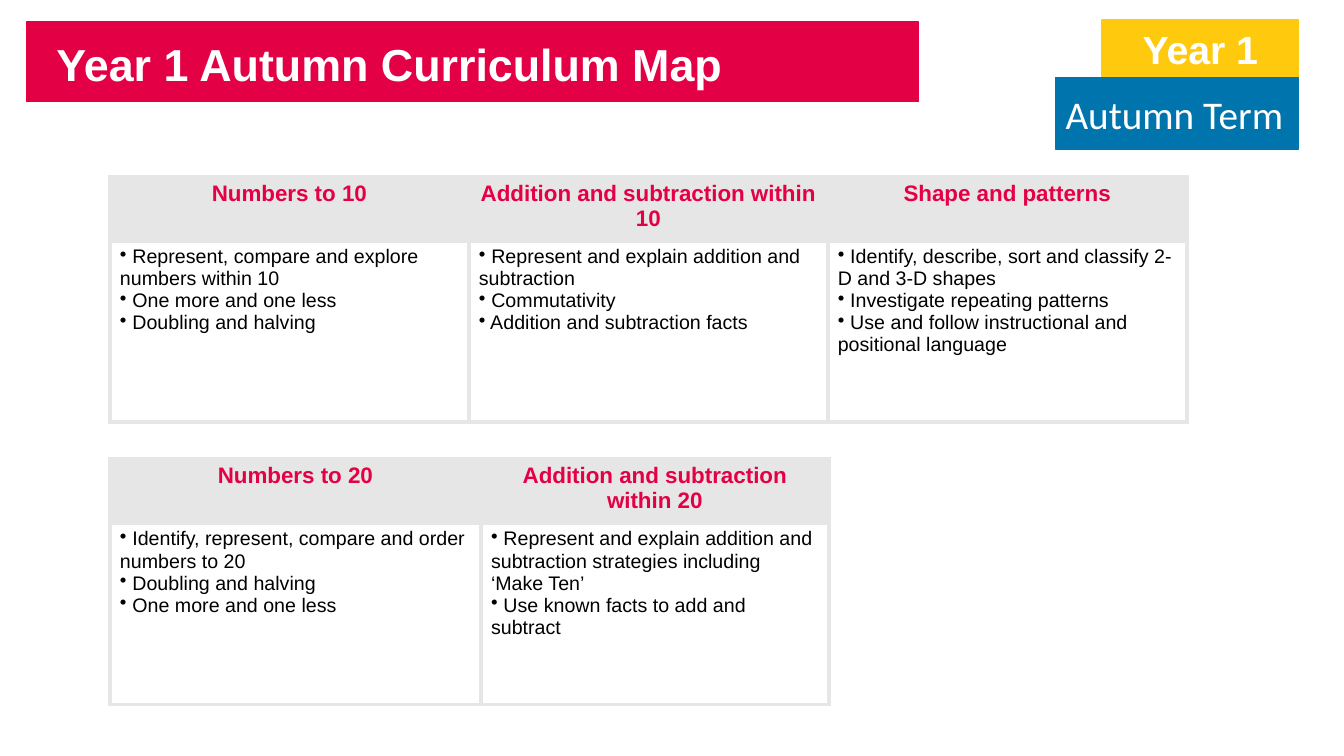
from lxml.etree import SubElement
from pptx import Presentation
from pptx.dml.color import RGBColor
from pptx.enum.shapes import MSO_SHAPE
from pptx.enum.text import MSO_ANCHOR, MSO_AUTO_SIZE, PP_ALIGN
from pptx.oxml.ns import qn
from pptx.util import Pt

PX = 9144
RED = RGBColor(0xE4, 0x00, 0x45)
GOLD = RGBColor(0xFF, 0xC9, 0x0D)
BLUE = RGBColor(0x00, 0x74, 0xAC)
GREY = RGBColor(0xE6, 0xE6, 0xE6)
WHITE = RGBColor(0xFF, 0xFF, 0xFF)
BLACK = RGBColor(0x00, 0x00, 0x00)

NUMBERS = [
    ("Numbers to 10", [
        "Represent, compare and explore numbers within 10",
        "One more and one less",
        "Doubling and halving"]),
    ("Addition and subtraction within 10", [
        "Represent and explain addition and subtraction",
        "Commutativity",
        "Addition and subtraction facts"]),
    ("Shape and patterns", [
        "Identify, describe, sort and classify 2-D and 3-D shapes",
        "Investigate repeating patterns",
        "Use and follow instructional and positional language"]),
]
TWENTY = [
    ("Numbers to 20", [
        "Identify, represent, compare and order numbers to 20",
        "Doubling and halving",
        "One more and one less"]),
    ("Addition and subtraction within 20", [
        "Represent and explain addition and subtraction strategies including ‘Make Ten’",
        "Use known facts to add and subtract"]),
]


def write(frame, *lines, size=14, color=BLACK, bold=False, font="Arial",
          align=PP_ALIGN.LEFT, bullet=None):
    for i, line in enumerate(lines):
        para = frame.add_paragraph() if i else frame.paragraphs[0]
        para.alignment = align
        run = para.add_run()
        run.text = f" {line}" if bullet else line
        run.font.size = Pt(size)
        run.font.name = font
        run.font.bold = bold
        run.font.color.rgb = color
        if bullet:
            props = para._p.get_or_add_pPr()
            props.set("marL", "0")
            props.set("indent", "0")
            SubElement(props, qn("a:buChar"), char=bullet)


class Map:
    edge = GREY
    width = 3

    def __init__(self, deck):
        self.slide = deck.slides.add_slide(deck.slide_layouts[5])
        self.shapes = self.slide.shapes

    def box(self, x, y, w, h, color):
        shape = self.shapes.add_shape(
            MSO_SHAPE.RECTANGLE, x * PX, y * PX, w * PX, h * PX)
        shape.shadow.inherit = False
        shape.fill.solid()
        shape.fill.fore_color.rgb = color
        shape.line.color.rgb = color
        shape.line.width = Pt(1)
        return shape

    def label(self, x, y, w, h, color, text, anchor, **style):
        frame = self.box(x, y, w, h, color).text_frame
        frame.vertical_anchor = anchor
        write(frame, text, size=28, color=WHITE, **style)

    def title(self, x, y, w, h, text):
        shape = self.shapes.title
        shape.left, shape.top = x * PX, y * PX
        shape.width, shape.height = w * PX, h * PX
        frame = shape.text_frame
        frame.word_wrap = False
        frame.auto_size = MSO_AUTO_SIZE.NONE
        frame.vertical_anchor = MSO_ANCHOR.TOP
        write(frame, text, size=32, color=WHITE, bold=True)
        self.shapes._spTree.append(shape._element)

    def border(self, cell):
        props = cell._tc.get_or_add_tcPr()
        for side in ("lnL", "lnR", "lnT", "lnB"):
            line = SubElement(props, qn(f"a:{side}"), w=str(Pt(self.width)))
            fill = SubElement(line, qn("a:solidFill"))
            SubElement(fill, qn("a:srgbClr"), val=str(self.edge))

    def table(self, x, y, cols, rows, topics):
        table = self.shapes.add_table(
            len(rows), len(cols), x * PX, y * PX,
            sum(cols) * PX, sum(rows) * PX).table
        table.first_row = table.horz_banding = False
        for row, high in zip(table.rows, rows):
            row.height = high * PX
        for i, (wide, (head, points)) in enumerate(zip(cols, topics)):
            table.columns[i].width = wide * PX
            top, body = table.cell(0, i), table.cell(1, i)
            for cell in (top, body):
                self.border(cell)
            top.fill.solid()
            top.fill.fore_color.rgb = self.edge
            body.fill.background()
            write(top.text_frame, head, size=16, color=RED, bold=True,
                  align=PP_ALIGN.CENTER)
            write(body.text_frame, *points, bullet="•")


def main():
    deck = Presentation()
    deck.slide_width, deck.slide_height = 1333 * PX, 750 * PX
    page = Map(deck)
    page.box(26, 22, 885, 79, RED)
    page.label(1093, 20, 195, 57, GOLD, "Year 1", MSO_ANCHOR.TOP,
               bold=True, align=PP_ALIGN.CENTER)
    page.label(1047, 77, 241, 71, BLUE, "Autumn Term", MSO_ANCHOR.MIDDLE,
               font="Calibri")
    page.title(46, 31, 686, 64, "Year 1 Autumn Curriculum Map")
    rows = (64, 180)
    page.table(109, 175, (356, 356, 356), rows, NUMBERS)
    page.table(109, 455, (368, 345), rows, TWENTY)
    deck.save("out.pptx")


if __name__ == "__main__":
    main()
